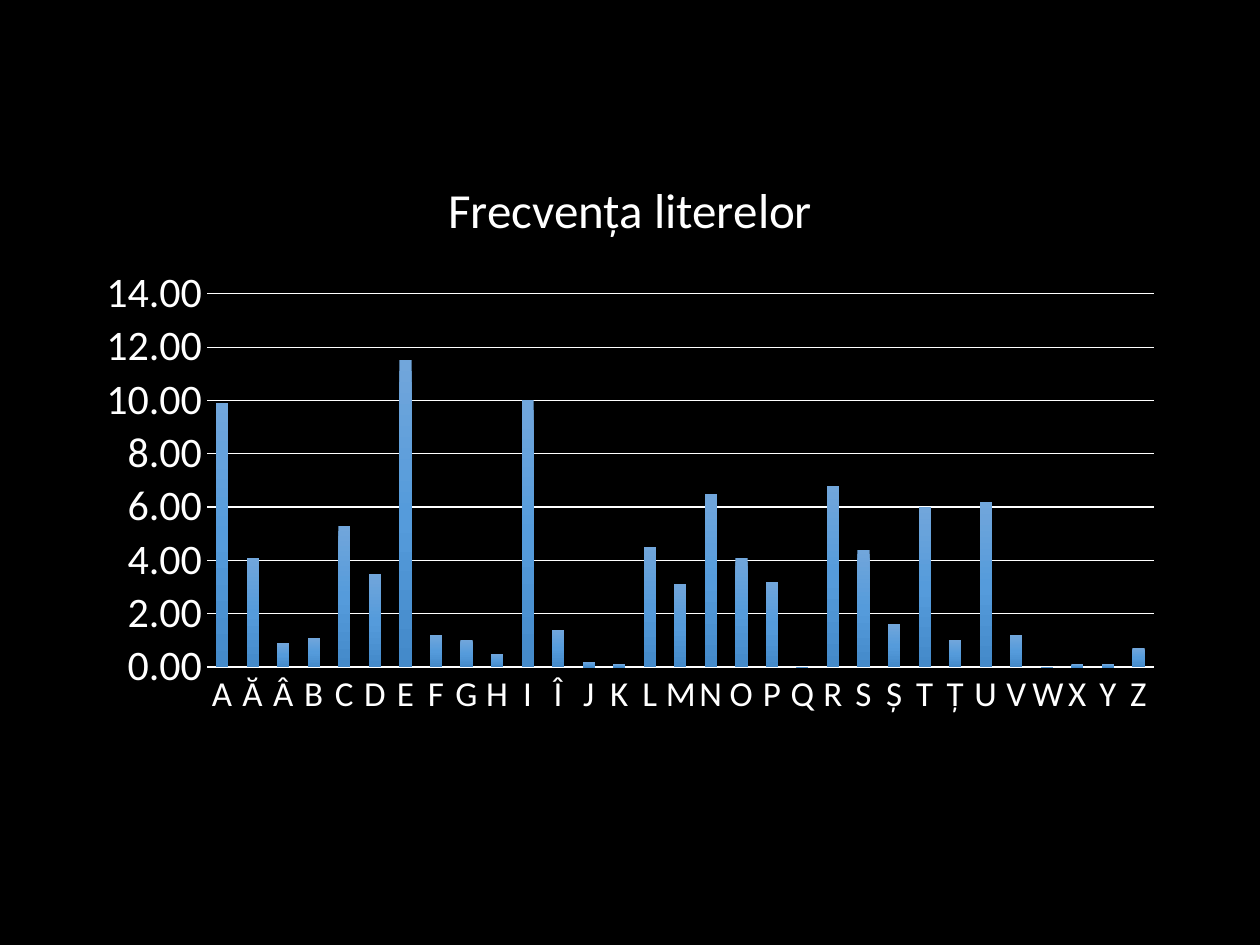
from lxml import etree
from pptx import Presentation
from pptx.chart.data import CategoryChartData
from pptx.dml.color import RGBColor
from pptx.enum.chart import XL_CHART_TYPE, XL_TICK_MARK
from pptx.oxml.ns import qn
from pptx.util import Inches, Pt

COLUMNS = XL_CHART_TYPE.COLUMN_CLUSTERED
NO_TICKS = XL_TICK_MARK.NONE
BLACK = RGBColor(0x00, 0x00, 0x00)
WHITE = RGBColor(0xFF, 0xFF, 0xFF)
BAR_GRADIENT = [
    (0, RGBColor(0x71, 0xA6, 0xDB)),
    (50, RGBColor(0x55, 0x9B, 0xDB)),
    (100, RGBColor(0x44, 0x8A, 0xCA)),
]
FONT_NAME = "Calibri"
LETTERS = "AĂÂBCDEFGHIÎJKLMNOPQRSȘTȚUVWXYZ"
FREQUENCIES = [
    9.9, 4.1, 0.9, 1.1, 5.3, 3.5, 11.5, 1.2, 1, 0.5, 10, 1.4, 0.2, 0.1, 4.5, 3.1,
    6.5, 4.1, 3.2, 0, 6.8, 4.4, 1.6, 6, 1, 6.2, 1.2, 0, 0.1, 0.1, 0.7,
]


def style_font(font, size):
    font.name = FONT_NAME
    font.size = Pt(size)
    font.bold = False
    font.color.rgb = WHITE


presentation = Presentation()
presentation.slide_width = Inches(10)
presentation.slide_height = Inches(7.5)
slide = presentation.slides.add_slide(presentation.slide_layouts[6])
slide.background.fill.solid()
slide.background.fill.fore_color.rgb = BLACK

# Letter frequency chart
chart_data = CategoryChartData(number_format="0.00")
chart_data.categories = list(LETTERS)
chart_data.add_series("Series 1", FREQUENCIES)
chart = slide.shapes.add_chart(
    COLUMNS, Inches(0.67), Inches(1.19), Inches(8.66), Inches(4.58), chart_data
).chart
style_font(chart.font, 10)
chart.has_legend = False

# Title
chart.has_title = True
title_frame = chart.chart_title.text_frame
title_frame.text = "Frecvența literelor"
style_font(title_frame.paragraphs[0].runs[0].font, 28)
chart.chart_title.include_in_layout = False

# Axes
category_axis, value_axis = chart.category_axis, chart.value_axis
for axis, size in ((category_axis, 20), (value_axis, 24)):
    axis.major_tick_mark = NO_TICKS
    axis.minor_tick_mark = NO_TICKS
    style_font(axis.tick_labels.font, size)
category_axis.format.line.color.rgb = WHITE
category_axis.format.line.width = Pt(1)
category_axis._element.find(qn("c:txPr")).find(qn("a:bodyPr")).set("rot", "0")

value_axis.minimum_scale = 0
value_axis.maximum_scale = 14
value_axis.major_unit = 2
value_axis.tick_labels.number_format = "0.00"
value_axis.tick_labels.number_format_is_linked = False
value_axis.format.line.fill.background()
value_axis.has_major_gridlines = True
value_axis.major_gridlines.format.line.color.rgb = WHITE
value_axis.major_gridlines.format.line.width = Pt(0.75)

# Columns with a three-stop gradient from top to bottom
plot = chart.plots[0]
plot.gap_width = 150
plot.vary_by_categories = False
series_fill = plot.series[0].format.fill
series_fill.gradient()
series_fill.gradient_angle = 270
stop_list = plot.series[0]._element.find(".//" + qn("a:gsLst"))
for stop in list(stop_list):
    stop_list.remove(stop)
for position, color in BAR_GRADIENT:
    stop = etree.SubElement(stop_list, qn("a:gs"), pos=str(position * 1000))
    etree.SubElement(stop, qn("a:srgbClr"), val=str(color))

presentation.save("out.pptx")
